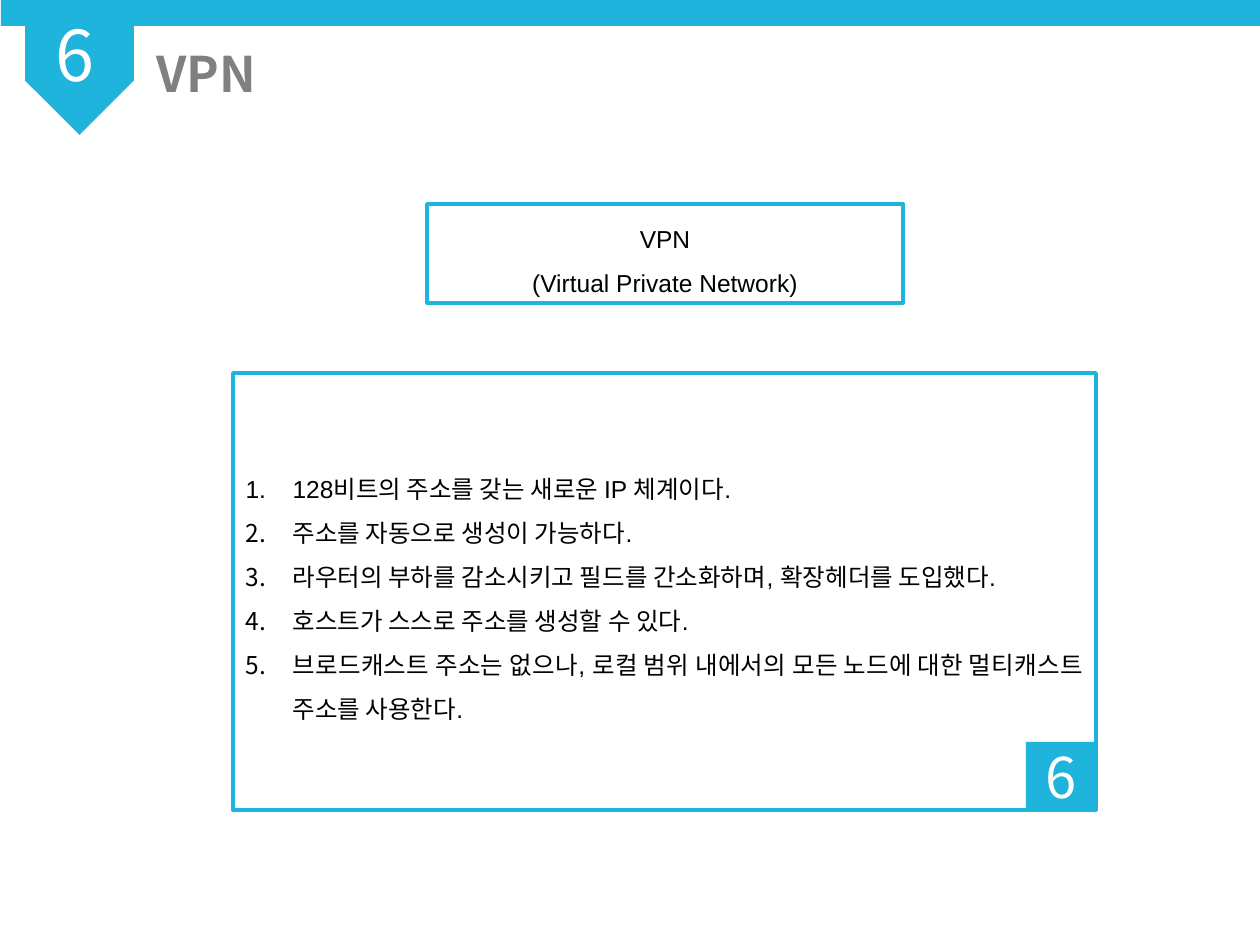
from dataclasses import dataclass

from lxml import etree
from pptx import Presentation
from pptx import util as u
from pptx.dml.color import RGBColor
from pptx.enum import shapes, text
from pptx.oxml.ns import qn

SCALE = u.Inches(1) // 126  # EMU in one px


@dataclass(frozen=True)
class Theme:
    accent: str = "1EB4DC"
    heading: str = "808080"
    ink: str = "000000"
    white: str = "FFFFFF"
    latin: str = "Arial"
    korean: str = "Noto Sans CJK KR"
    title_pt: int = 28
    body_pt: int = 14
    number_pt: int = 40
    page_pt: int = 32
    line_pt: int = 2


T = Theme()
NUMBER = "6"
RULES = [
    "128비트의 주소를 갖는 새로운 IP 체계이다.",
    "주소를 자동으로 생성이 가능하다.",
    "라우터의 부하를 감소시키고 필드를 간소화하며, 확장헤더를 도입했다.",
    "호스트가 스스로 주소를 생성할 수 있다.",
    "브로드캐스트 주소는 없으나, 로컬 범위 내에서의 모든 노드에 대한 멀티캐스트 주소를 사용한다.",
]


def rgb(color):
    return RGBColor.from_string(color)


def px(*lengths):
    return [n * SCALE for n in lengths]


def place(sp, *box):
    sp.left, sp.top, sp.width, sp.height = px(*box)


def outline(sp):
    sp.fill.background()
    sp.line.color.rgb = rgb(T.accent)
    sp.line.width = u.Pt(T.line_pt)


def add_block(s, kind, *box):
    sp = s.shapes.add_shape(kind, *px(*box))
    sp.shadow.inherit = False
    sp.fill.solid()
    sp.fill.fore_color.rgb = rgb(T.accent)
    sp.line.fill.background()
    return sp


def write(sp, words, size, color, font, align, anchor, spacing=1.0, bold=False):
    tf = sp.text_frame
    tf.text = words
    tf.word_wrap = True
    tf.auto_size = text.MSO_AUTO_SIZE.NONE
    tf.vertical_anchor = anchor
    for p in tf.paragraphs:
        p.alignment = align
        p.line_spacing = spacing
        p.space_before = u.Pt(0)
        for r in p.runs:
            r.font.size = u.Pt(size)
            r.font.bold = bold
            r.font.name = font
            r.font.color.rgb = rgb(color)
            ea = etree.SubElement(r._r.get_or_add_rPr(), qn("a:ea"))
            ea.set("typeface", T.korean)
    return tf


def number_list(tf, indent):
    for p in tf.paragraphs:
        pPr = p._p.get_or_add_pPr()
        pPr.set("marL", str(indent * SCALE))
        pPr.set("indent", str(-indent * SCALE))
        etree.SubElement(pPr, qn("a:buFont")).set("typeface", "+mj-lt")
        etree.SubElement(pPr, qn("a:buAutoNum")).set("type", "arabicPeriod")


def header(s, x, y, w, h):
    # Band, pointed tab with the chapter number, title
    add_block(s, shapes.MSO_SHAPE.RECTANGLE, x, y, w, h)
    tab = add_block(s, shapes.MSO_SHAPE.SNIP_2_SAME_RECTANGLE,
                    x + 24, y + h, 109, 109)
    tab.adjustments[0], tab.adjustments[1] = 0.5, 0
    tab.rotation = 180

    number = s.shapes.add_textbox(*px(x + 42, y + 11, 86, 97))
    tf = write(number, NUMBER, T.number_pt, T.white, T.korean,
               text.PP_ALIGN.LEFT, text.MSO_ANCHOR.TOP)
    tf.margin_top = 0

    title = s.shapes.title
    place(title, x + 143, y + 43, 882, 93)
    tf = write(title, "VPN", T.title_pt, T.heading, T.korean,
               text.PP_ALIGN.LEFT, text.MSO_ANCHOR.TOP, bold=True)
    tf.margin_top = 0


def term_box(s, *box):
    sp = add_block(s, shapes.MSO_SHAPE.RECTANGLE, *box)
    outline(sp)
    write(sp, "VPN\n(Virtual Private Network)", T.body_pt, T.ink, T.latin,
          text.PP_ALIGN.CENTER, text.MSO_ANCHOR.MIDDLE, 1.5)


def rules_panel(s, x, y, w, h):
    # Numbered list in a frame
    body = s.placeholders[1]
    place(body, x, y, w, h)
    outline(body)
    tf = write(body, "\n".join(RULES), T.body_pt, T.ink, T.latin,
               text.PP_ALIGN.JUSTIFY, text.MSO_ANCHOR.MIDDLE, 1.5)
    number_list(tf, 47)

    # Number in the bottom right corner
    cw, ch = 70, 68
    corner = add_block(s, shapes.MSO_SHAPE.RECTANGLE,
                       x + w - cw, y + h - ch, cw, ch)
    write(corner, NUMBER, T.page_pt, T.white, T.korean,
          text.PP_ALIGN.CENTER, text.MSO_ANCHOR.MIDDLE)


def main():
    prs = Presentation()
    prs.slide_width, prs.slide_height = px(1260, 945)
    s = prs.slides.add_slide(prs.slide_layouts[1])
    header(s, 1, 0, 1260, 26)
    rules_panel(s, 233, 373, 863, 437)
    term_box(s, 427, 204, 476, 99)
    prs.save("out.pptx")


if __name__ == "__main__":
    main()
